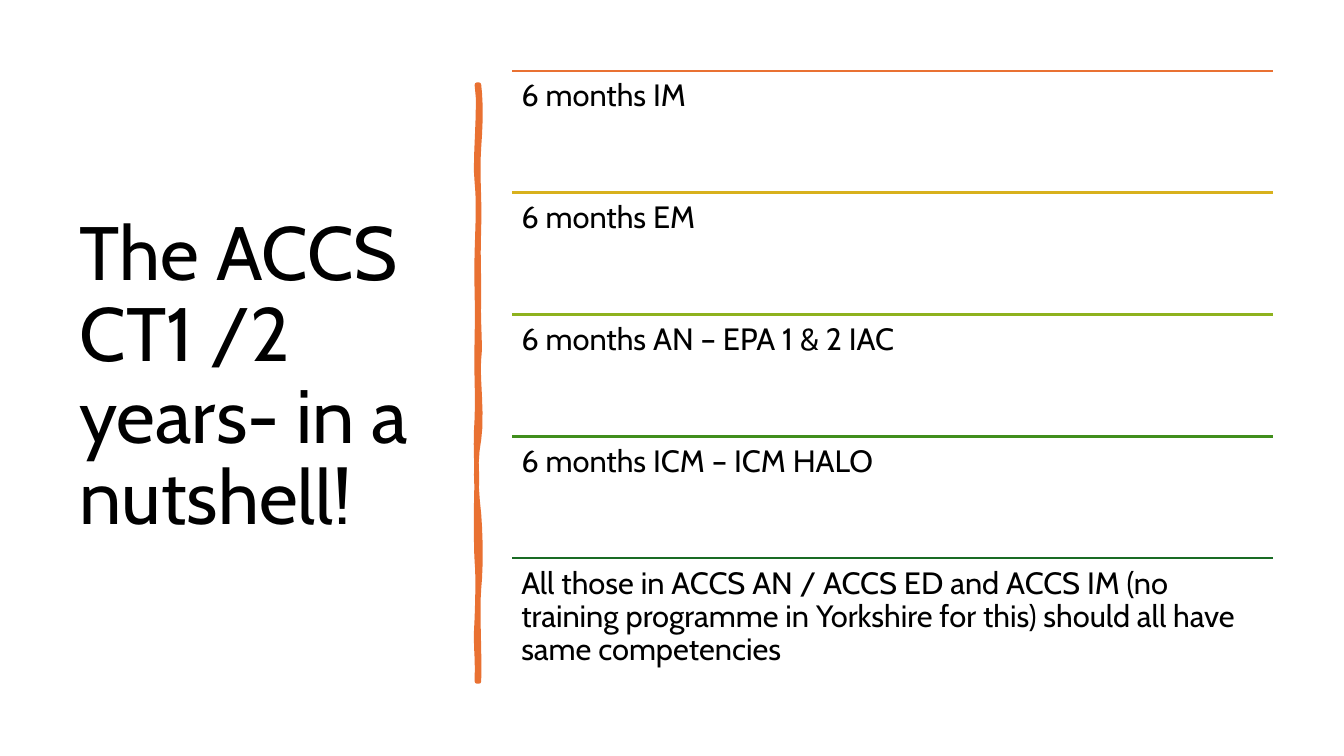
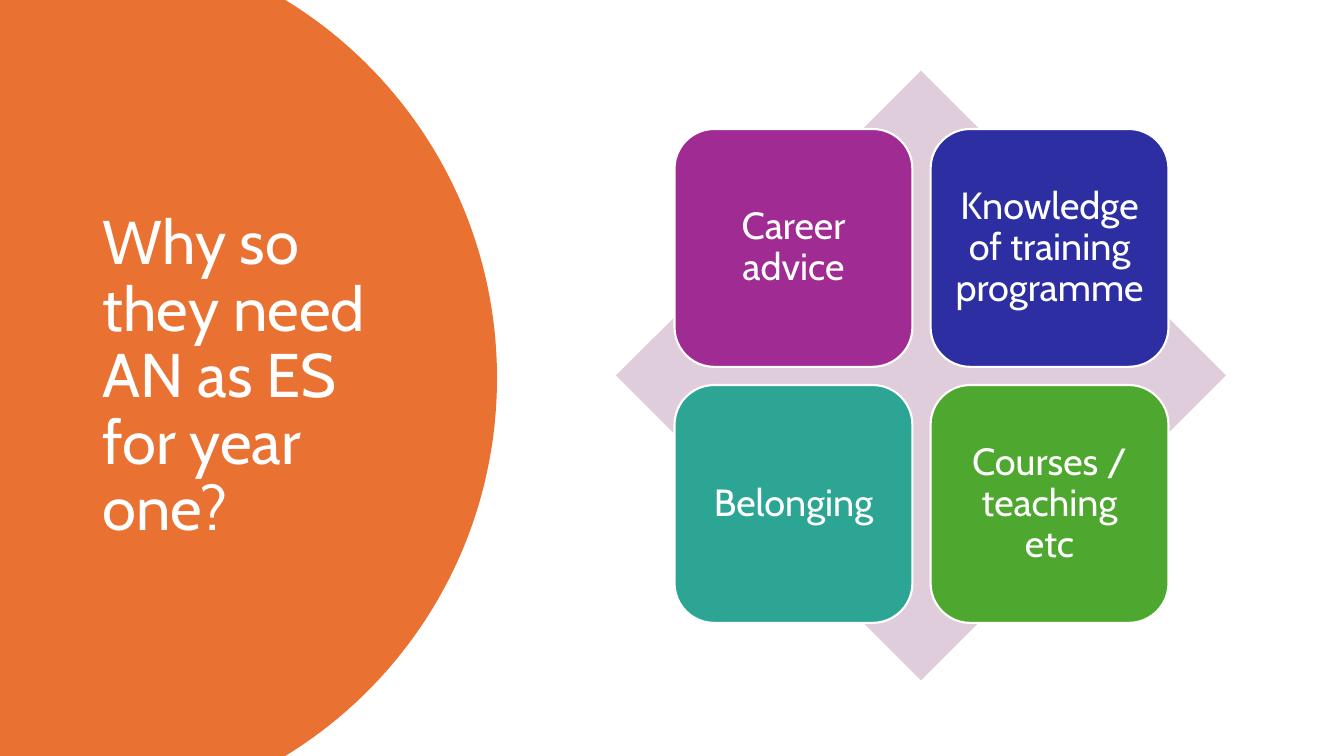
"""Build two slides on the ACCS training years."""
from lxml.etree import SubElement
from pptx import Presentation
from pptx.dml.color import RGBColor
from pptx.enum.shapes import MSO_CONNECTOR, MSO_SHAPE
from pptx.enum.text import MSO_ANCHOR, PP_ALIGN
from pptx.oxml.ns import qn
from pptx.util import Inches, Pt

FONT = "Cabin"
ORANGE, BLACK, WHITE, PALE = "E97132", "000000", "FFFFFF", "DFCDDC"

NUTSHELL_TITLE = "The ACCS CT1 /2 years- in a nutshell!"
ROTATIONS = [
    ("6 months IM", ORANGE),
    ("6 months EM", "D8B11D"),
    ("6 months AN – EPA 1 & 2 IAC", "8EB21E"),
    ("6 months ICM – ICM HALO", "408E1C"),
    ("All those in ACCS AN / ACCS ED and ACCS IM (no training programme "
     "in Yorkshire for this) should all have same competencies", "196B24"),
]
ROW_LEFT, ROW_TOP, ROW_WIDTH, ROW_HEIGHT = 5.08, 0.7, 7.55, 1.21

REASONS_TITLE = "Why so they need AN as ES for year one?"
REASONS = [
    ("Career advice", "A02B93"),
    ("Knowledge of training programme", "2C2EA2"),
    ("Belonging", "2DA594"),
    ("Courses / teaching etc", "4EA72E"),
]
TILE_LEFT, TILE_TOP, TILE_SIZE, TILE_PITCH = 6.69, 1.28, 2.36, 2.54

BRUSH_START = (4.75, 0.84)
BRUSH_CURVES = [
    (4.77, 1.02, 4.77, 1.19, 4.75, 1.46), (4.73, 1.73, 4.76, 1.95, 4.75, 2.26),
    (4.74, 2.57, 4.75, 2.62, 4.75, 2.94), (4.74, 3.25, 4.77, 3.42, 4.75, 3.56),
    (4.73, 3.7, 4.79, 4.14, 4.75, 4.36), (4.71, 4.57, 4.72, 4.84, 4.75, 5.1),
    (4.77, 5.36, 4.77, 5.64, 4.75, 5.84), (4.73, 6.03, 4.76, 6.5, 4.75, 6.76),
    (4.74, 6.76, 4.73, 6.76, 4.73, 6.76), (4.74, 6.46, 4.71, 6.44, 4.73, 6.13),
    (4.74, 5.83, 4.74, 5.7, 4.73, 5.57), (4.72, 5.44, 4.72, 4.95, 4.73, 4.77),
    (4.73, 4.59, 4.71, 4.45, 4.73, 4.15), (4.74, 3.86, 4.72, 3.73, 4.73, 3.35),
    (4.74, 2.98, 4.72, 2.81, 4.73, 2.5), (4.74, 2.18, 4.75, 2, 4.73, 1.81),
    (4.7, 1.63, 4.77, 1.04, 4.73, 0.84), (4.74, 0.84, 4.74, 0.84, 4.75, 0.84),
]
PANEL_START = (2.83, 0)
PANEL_CURVES = [
    (4.09, 0.77, 4.93, 2.16, 4.93, 3.75), (4.93, 5.34, 4.09, 6.73, 2.83, 7.5),
]
PANEL_CORNERS = [(0, 7.5), (0, 0)]


def color(value):
    return RGBColor.from_string(value)


def inches(*values):
    return [Inches(value) for value in values]


def trace(start, curves, steps):
    points = [start]
    for x1, y1, x2, y2, x3, y3 in curves:
        x0, y0 = points[-1]
        for step in range(1, steps + 1):
            t = step / steps
            a, b, c, d = (1 - t) ** 3, 3 * t * (1 - t) ** 2, 3 * t * t * (1 - t), t ** 3
            points.append((a * x0 + b * x1 + c * x2 + d * x3,
                           a * y0 + b * y1 + c * y2 + d * y3))
    return points


def paint(shape, fill, line=None, width=1.5):
    shape.shadow.inherit = False
    shape.fill.solid()
    shape.fill.fore_color.rgb = color(fill)
    if line:
        shape.line.color.rgb = color(line)
        shape.line.width = Pt(width)
    else:
        shape.line.fill.background()


def add_outline(page, points, fill, line=None, width=1.5):
    corners = [inches(*point) for point in points]
    builder = page.shapes.build_freeform(*corners[0])
    builder.add_line_segments(corners[1:], close=True)
    shape = builder.convert_to_shape()
    paint(shape, fill, line, width)
    return shape


def write(shape, text, size, ink, anchor, align=PP_ALIGN.LEFT, margin=None):
    frame = shape.text_frame
    frame.word_wrap = True
    frame.vertical_anchor = anchor
    if margin is not None:
        frame.margin_left = frame.margin_right = Inches(margin)
        frame.margin_top = frame.margin_bottom = Inches(margin)
    para = frame.paragraphs[0]
    para.alignment = align
    para.line_spacing = 0.9
    span = para.add_run()
    span.text = text
    span.font.name = FONT
    span.font.size = Pt(size)
    span.font.color.rgb = color(ink)


def add_title(page, text, left, width, size, ink):
    box = page.shapes.add_textbox(*inches(left, 0.7, width, 6.1))
    write(box, text, size, ink, MSO_ANCHOR.MIDDLE)


def add_rule(page, left, top, width, ink):
    rule = page.shapes.add_connector(
        MSO_CONNECTOR.STRAIGHT, *inches(left, top, left + width, top))
    rule.line.color.rgb = color(ink)
    rule.line.width = Pt(1.5)
    SubElement(rule._element.spPr, qn("a:effectLst"))


def build_nutshell(page):
    add_title(page, NUTSHELL_TITLE, 0.69, 3.74, 54, BLACK)
    brush = add_outline(page, trace(BRUSH_START, BRUSH_CURVES, 6), ORANGE, ORANGE, 3.25)
    SubElement(brush.line._get_or_add_ln(), qn("a:round"))
    for index, (text, ink) in enumerate(ROTATIONS):
        top = ROW_TOP + index * ROW_HEIGHT
        add_rule(page, ROW_LEFT, top, ROW_WIDTH, ink)
        box = page.shapes.add_textbox(*inches(ROW_LEFT, top, ROW_WIDTH, ROW_HEIGHT))
        write(box, text, 22, BLACK, MSO_ANCHOR.TOP, margin=0.09)


def build_reasons(page):
    add_outline(page, trace(PANEL_START, PANEL_CURVES, 40) + PANEL_CORNERS, ORANGE)
    add_title(page, REASONS_TITLE, 0.92, 3.23, 44, WHITE)
    diamond = page.shapes.add_shape(MSO_SHAPE.DIAMOND, *inches(6.11, 0.7, 6.05, 6.05))
    paint(diamond, PALE)
    for index, (text, fill) in enumerate(REASONS):
        row, column = divmod(index, 2)
        tile = page.shapes.add_shape(MSO_SHAPE.ROUNDED_RECTANGLE, *inches(
            TILE_LEFT + column * TILE_PITCH, TILE_TOP + row * TILE_PITCH,
            TILE_SIZE, TILE_SIZE))
        paint(tile, fill, WHITE)
        write(tile, text, 27, WHITE, MSO_ANCHOR.MIDDLE, PP_ALIGN.CENTER, 0.11)


def main():
    deck = Presentation()
    deck.slide_width, deck.slide_height = inches(13.33, 7.5)
    for build in (build_nutshell, build_reasons):
        build(deck.slides.add_slide(deck.slide_layouts[6]))
    deck.save("out.pptx")


if __name__ == "__main__":
    main()
